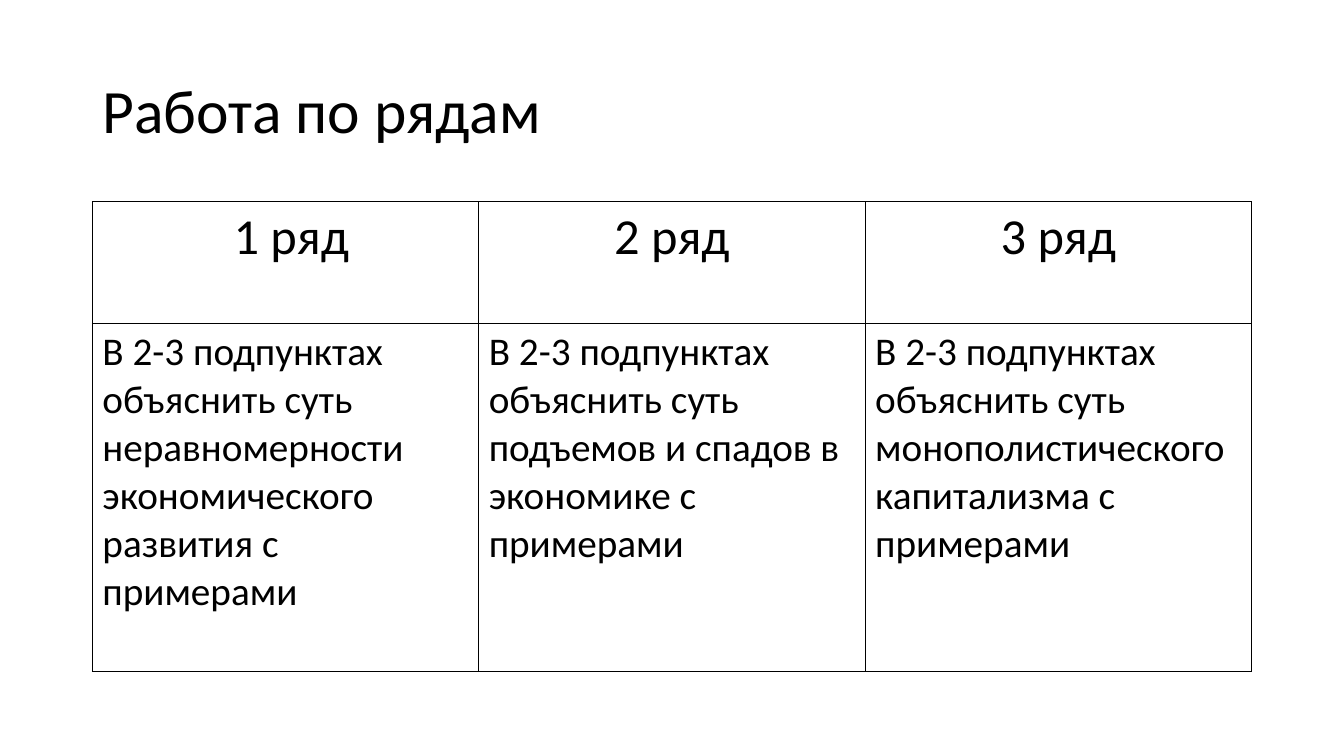
import pptx
import pptx.util
import pptx.dml.color
import pptx.enum.text
import pptx.oxml
import pptx.oxml.ns

Pt = pptx.util.Pt
FONT = "Calibri"
COLORS = {"text": "000000", "border": "000000", "cell": "FFFFFF"}
LEFT, WIDTH = 66, 828

prs = pptx.Presentation()
prs.slide_width, prs.slide_height = Pt(960), Pt(540)
s = prs.slides.add_slide(prs.slide_layouts[6])


def style(p, size):
    for r in p.runs:
        r.font.name = FONT
        r.font.size = Pt(size)
        r.font.color.rgb = pptx.dml.color.RGBColor.from_string(COLORS["text"])


def add_borders(cell):
    tc_pr = cell._tc.get_or_add_tcPr()
    for i, side in enumerate(("lnL", "lnR", "lnT", "lnB")):
        tc_pr.insert(i, pptx.oxml.parse_xml(
            f'<a:{side} {pptx.oxml.ns.nsdecls("a")} w="{Pt(1)}"><a:solidFill>'
            f'<a:srgbClr val="{COLORS["border"]}"/></a:solidFill></a:{side}>'))


# Title
tf = s.shapes.add_textbox(Pt(LEFT), Pt(28.75), Pt(WIDTH), Pt(104.4)).text_frame
tf.word_wrap = True
tf.vertical_anchor = pptx.enum.text.MSO_ANCHOR.MIDDLE
p = tf.paragraphs[0]
p.text = "Работа по рядам"
p.line_spacing = 0.9
style(p, 44)

# Table of tasks, one column per row of desks
topics = ["неравномерности экономического развития",
          "подъемов и спадов в экономике",
          "монополистического капитализма"]
rows = [
    (87.1, 36, pptx.enum.text.PP_ALIGN.CENTER, [" 1 ряд", "2 ряд", "3 ряд"]),
    (248.4, 28, pptx.enum.text.PP_ALIGN.LEFT,
     [f"В 2-3 подпунктах объяснить суть {topic} с примерами" for topic in topics]),
]
height = sum(row[0] for row in rows)
table = s.shapes.add_table(len(rows), len(topics), Pt(LEFT), Pt(144),
                           Pt(WIDTH), Pt(height)).table
table.horz_banding = False
table.first_row = False
for column in table.columns:
    column.width = Pt(WIDTH / len(topics))
for i, (row_height, size, align, texts) in enumerate(rows):
    table.rows[i].height = Pt(row_height)
    for j, text in enumerate(texts):
        cell = table.cell(i, j)
        cell.fill.solid()
        cell.fill.fore_color.rgb = pptx.dml.color.RGBColor.from_string(COLORS["cell"])
        add_borders(cell)
        p = cell.text_frame.paragraphs[0]
        p.text = text
        p.alignment = align
        style(p, size)

prs.save("out.pptx")
